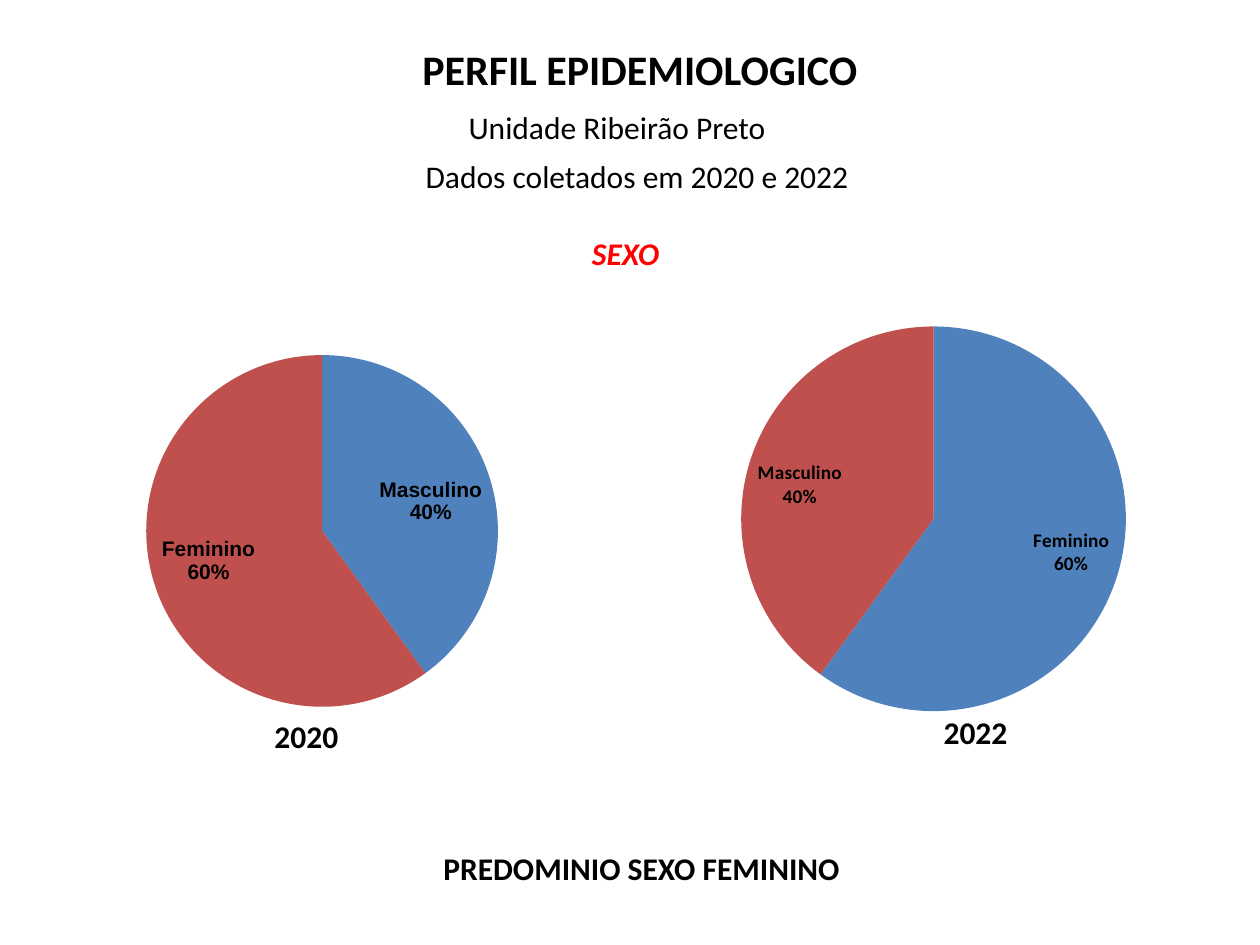
from lxml import etree
from pptx import Presentation
from pptx.chart.data import CategoryChartData
from pptx.dml.color import RGBColor
from pptx.enum.chart import XL_CHART_TYPE, XL_LABEL_POSITION
from pptx.enum.text import MSO_AUTO_SIZE, PP_ALIGN
from pptx.oxml.ns import qn
from pptx.util import Inches, Pt

PIE = XL_CHART_TYPE.PIE
INSIDE_END = XL_LABEL_POSITION.INSIDE_END
FIT_SHAPE = MSO_AUTO_SIZE.SHAPE_TO_FIT_TEXT
CENTER = PP_ALIGN.CENTER
COLUMNS, ROWS = 100, 75
CELL = Inches(0.1)
LINE_ROWS = 4
BLACK, RED = "000000", "FF0000"
SLICE_COLORS = ["4F81BD", "C0504D"]


def color(hex_value):
    return RGBColor.from_string(hex_value)


def grid(*cells):
    return [round(cell * CELL) for cell in cells]


def style_font(font, size, name="Calibri", fill=BLACK, bold=False, italic=False):
    font.size = Pt(size)
    font.name = name
    font.bold = bold
    font.italic = italic
    font.color.rgb = color(fill)


def add_text(slide, text, column, row, width, height=LINE_ROWS, size=18,
             wrap=False, align=None, **style):
    box = slide.shapes.add_textbox(*grid(column, row, width, height))
    frame = box.text_frame
    frame.word_wrap = wrap
    frame.auto_size = FIT_SHAPE
    frame.text = text
    paragraph = frame.paragraphs[0]
    paragraph.alignment = align
    style_font(paragraph.runs[0].font, size, **style)


def set_plot_layout(chart, shares):
    plot_area = chart._chartSpace.find(".//" + qn("c:plotArea"))
    for old_layout in plot_area.findall(qn("c:layout")):
        plot_area.remove(old_layout)
    layout = etree.Element(qn("c:layout"))
    plot_area.insert(0, layout)
    manual = etree.SubElement(layout, qn("c:manualLayout"))
    settings = [("layoutTarget", "inner"), ("xMode", "edge"), ("yMode", "edge")]
    settings += zip("xywh", shares)
    for tag, value in settings:
        etree.SubElement(manual, qn("c:" + tag)).set("val", str(value))


def label_slices(chart, size, font_name):
    series = chart.plots[0].series[0]
    labels = series.data_labels
    labels.show_value = False
    labels.show_category_name = True
    labels.show_percentage = True
    labels.number_format = "0%"
    labels.number_format_is_linked = False
    labels.position = INSIDE_END
    style_font(labels.font, size, font_name, bold=True)
    separator = etree.Element(qn("c:separator"))
    separator.text = "\n"
    chart._chartSpace.find(".//" + qn("c:showBubbleSize")).addnext(separator)


def add_pie(slide, shares_by_sex, place, plot_shares, label_size, label_font):
    data = CategoryChartData()
    data.categories = list(shares_by_sex)
    data.add_series("Series 1", list(shares_by_sex.values()))
    chart = slide.shapes.add_chart(PIE, *grid(*place), data).chart
    chart.has_title = False
    chart.has_legend = False
    style_font(chart.font, 10)
    plot = chart.plots[0]
    plot.vary_by_categories = True
    for index, slice_color in enumerate(SLICE_COLORS):
        fill = plot.series[0].points[index].format.fill
        fill.solid()
        fill.fore_color.rgb = color(slice_color)
    label_slices(chart, label_size, label_font)
    set_plot_layout(chart, plot_shares)


def main():
    presentation = Presentation()
    presentation.slide_width, presentation.slide_height = grid(COLUMNS, ROWS)
    slide = presentation.slides.add_slide(presentation.slide_layouts[6])

    add_text(slide, "SEXO", 46, 18.1, 7.4, fill=RED, bold=True, italic=True)
    add_text(slide, "2020", 20.8, 56.4, 7.1, bold=True)
    add_text(slide, "PREDOMINIO SEXO FEMININO", 34.2, 66.9, 33.8, bold=True)
    add_text(slide, "2022", 73.9, 56.1, 7.1, bold=True)
    add_text(slide, "PERFIL EPIDEMIOLOGICO", 20.6, 3, 60.4, 5, size=24,
             wrap=True, align=CENTER, bold=True)
    add_text(slide, "Unidade Ribeirão Preto", 36.2, 8.1, 25.9)
    add_pie(slide, {"Masculino": 40, "Feminino": 60}, (2.5, 26.7, 46.6, 29.7),
            (0, 0.05, 0.99, 0.94), 12, "Arial")
    add_text(slide, "Dados coletados em 2020 e 2022", 32.8, 12, 36)
    add_pie(slide, {"Feminino": 60, "Masculino": 40}, (50.8, 22.1, 50.1, 34.7),
            (0.01, 0.11, 0.91, 0.88), 11, "Calibri")

    presentation.save("out.pptx")


if __name__ == "__main__":
    main()
